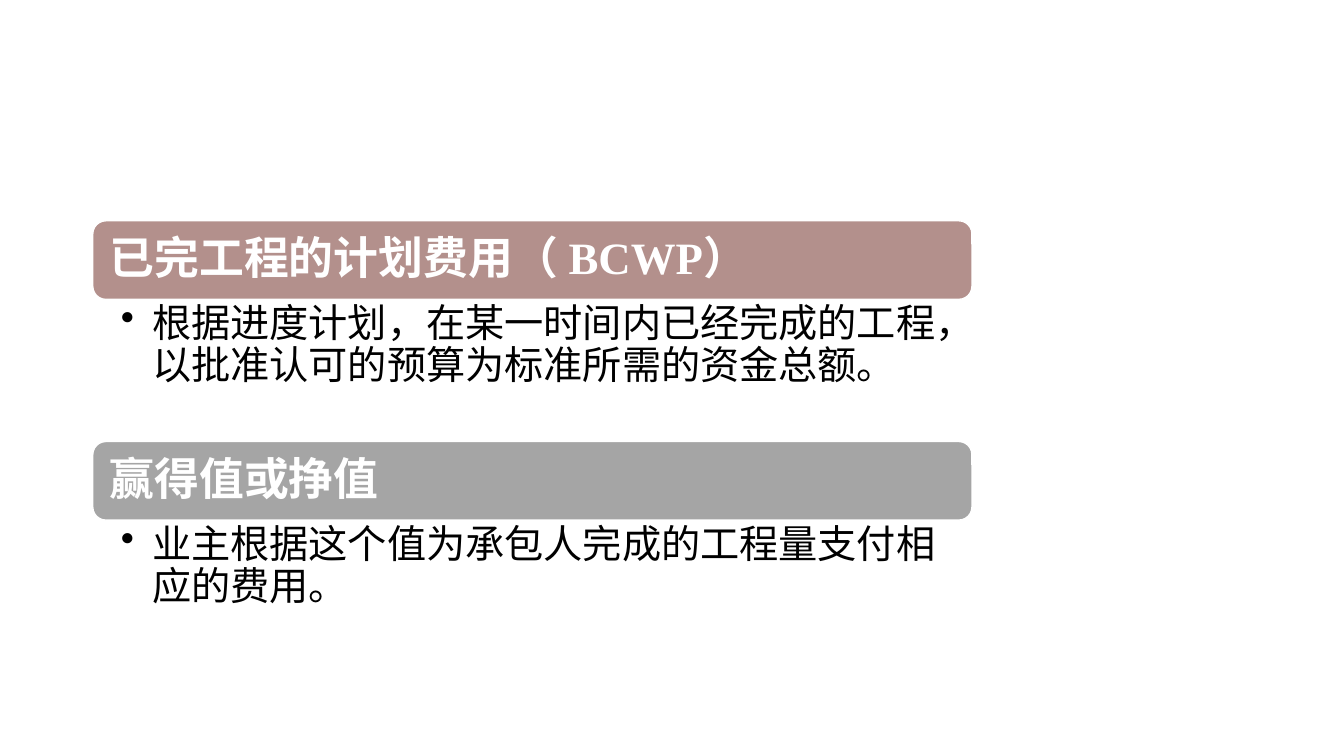
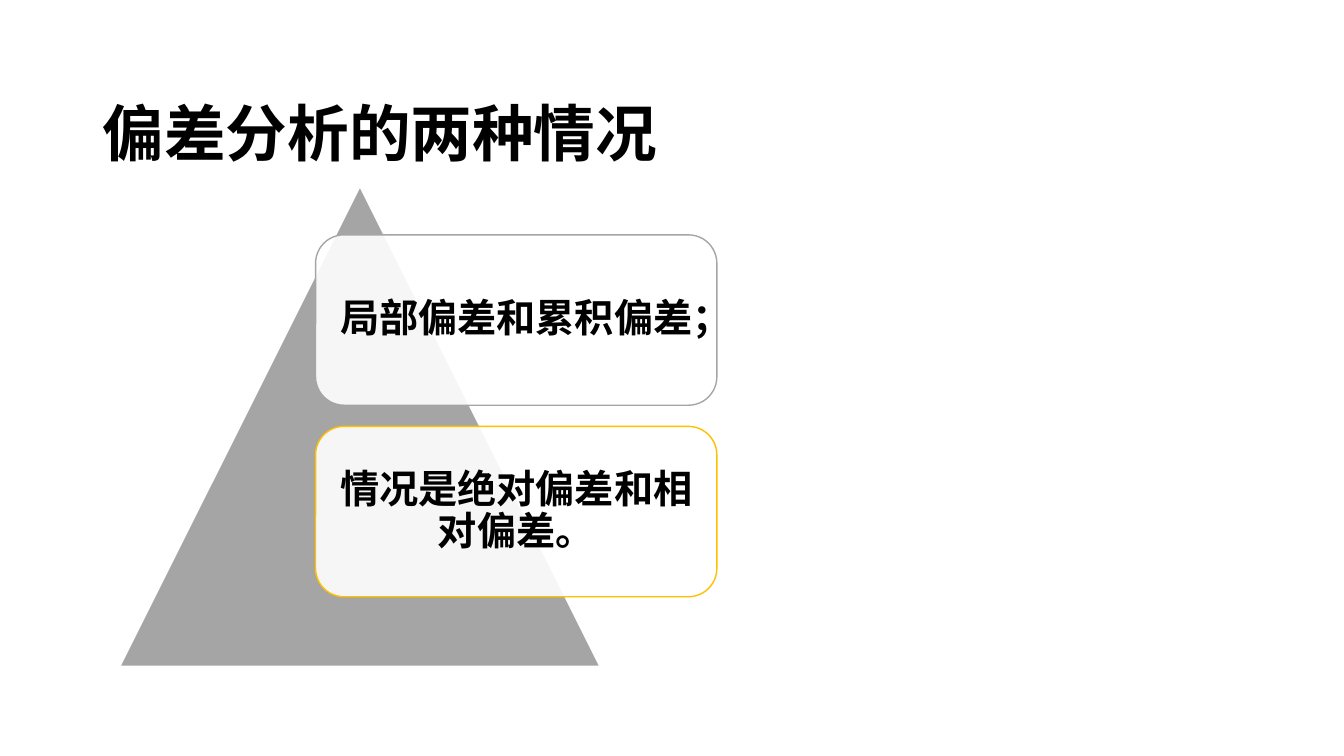
"""Build two slides on earned value and deviation analysis."""
import pptx
import pptx.dml.color
import pptx.enum.shapes
import pptx.enum.text
import pptx.oxml.ns
import pptx.util
from lxml import etree

Inches = pptx.util.Inches
SHAPES = pptx.enum.shapes.MSO_SHAPE
ALIGN = pptx.enum.text.PP_ALIGN
ANCHOR = pptx.enum.text.MSO_ANCHOR
FONT = "Times New Roman"
COLORS = {"white": "FFFFFF", "black": "000000", "gray": "A5A5A5",
          "rose": "B3908C", "gold": "FFC000"}
LEFT = 0.92

SECTIONS = [
    ("已完工程的计划费用（ BCWP）", "rose",
     "根据进度计划，在某一时间内已经完成的工程，以批准认可的预算为标准所需的资金总额。"),
    ("赢得值或挣值", "gray", "业主根据这个值为承包人完成的工程量支付相应的费用。"),
]
CARDS = [("局部偏差和累积偏差；", "gray"), ("情况是绝对偏差和相对偏差。", "gold")]


def rgb(name):
    """Return the named colour."""
    return pptx.dml.color.RGBColor.from_string(COLORS[name])


def add_bullet(paragraph, indent):
    """Give a paragraph a hanging round bullet."""
    properties = paragraph._p.get_or_add_pPr()
    properties.set("marL", str(Inches(indent)))
    properties.set("indent", str(-Inches(indent)))
    bullet = etree.SubElement(properties, pptx.oxml.ns.qn("a:buChar"))
    bullet.set("char", "•")


def write_text(shape, text, size=28, color="black", bold=True, align=ALIGN.LEFT,
               anchor=ANCHOR.MIDDLE, insets=(0.1, 0.05, 0.1, 0.05),
               spacing=0.9, indent=None):
    """Write one formatted paragraph into a shape."""
    frame = shape.text_frame
    frame.word_wrap = True
    frame.vertical_anchor = anchor
    (frame.margin_left, frame.margin_top,
     frame.margin_right, frame.margin_bottom) = map(Inches, insets)
    paragraph = frame.paragraphs[0]
    paragraph.alignment = align
    paragraph.line_spacing = spacing
    if indent is not None:
        add_bullet(paragraph, indent)
    run = paragraph.add_run()
    run.text = text
    run.font.name = FONT
    run.font.size = pptx.util.Pt(size)
    run.font.bold = bold
    run.font.color.rgb = rgb(color)


def add_text(slide, box, text, **text_format):
    """Add a text box with formatted text."""
    shape = slide.shapes.add_textbox(*map(Inches, box))
    write_text(shape, text, **text_format)


def add_block(slide, kind, box, fill, line="white", opacity=None):
    """Add a filled, outlined preset shape."""
    shape = slide.shapes.add_shape(kind, *map(Inches, box))
    shape.shadow.inherit = False
    shape.fill.solid()
    shape.fill.fore_color.rgb = rgb(fill)
    shape.line.color.rgb = rgb(line)
    shape.line.width = pptx.util.Pt(1)
    if opacity is not None:
        color = shape._element.spPr.find(".//" + pptx.oxml.ns.qn("a:srgbClr"))
        alpha = etree.SubElement(color, pptx.oxml.ns.qn("a:alpha"))
        alpha.set("val", str(opacity * 1000))
    return shape


def add_section(slide, top, heading, color, body):
    """Add a heading bar with a bulleted explanation below it."""
    width, bar_height, body_height = 8.72, 0.78, 1.4
    bar = add_block(slide, SHAPES.ROUNDED_RECTANGLE,
                    (LEFT, top, width, bar_height), color)
    write_text(bar, heading, size=32, color="white", insets=(0.13,) * 4)
    add_text(slide, (LEFT, top + bar_height, width, body_height), body,
             bold=False, anchor=ANCHOR.TOP, insets=(0.28, 0.04, 0.22, 0.04),
             indent=0.31)


def add_card(slide, top, text, outline):
    """Add a translucent card with centred text."""
    card = add_block(slide, SHAPES.ROUNDED_RECTANGLE, (3.13, top, 3.98, 1.69),
                     "white", outline, opacity=90)
    write_text(card, text, align=ALIGN.CENTER, insets=(0.12,) * 4)


def build_earned_value(slide):
    """Build the list of earned value terms."""
    for index, section in enumerate(SECTIONS):
        add_section(slide, 2.19 + index * 2.19, *section)


def build_deviation(slide):
    """Build the triangle with the deviation cards."""
    add_text(slide, (LEFT, 0.4, 11.5, 1.45), "偏差分析的两种情况",
             size=44, spacing=1.5)
    add_block(slide, SHAPES.ISOSCELES_TRIANGLE, (1.19, 1.85, 4.76, 4.76), "gray")
    for index, card in enumerate(CARDS):
        add_card(slide, 2.33 + index * 1.9, *card)


def main():
    """Create and save the presentation."""
    presentation = pptx.Presentation()
    presentation.slide_width = Inches(13.33)
    presentation.slide_height = Inches(7.5)
    for build in (build_earned_value, build_deviation):
        build(presentation.slides.add_slide(presentation.slide_layouts[6]))
    presentation.save("out.pptx")


if __name__ == "__main__":
    main()
